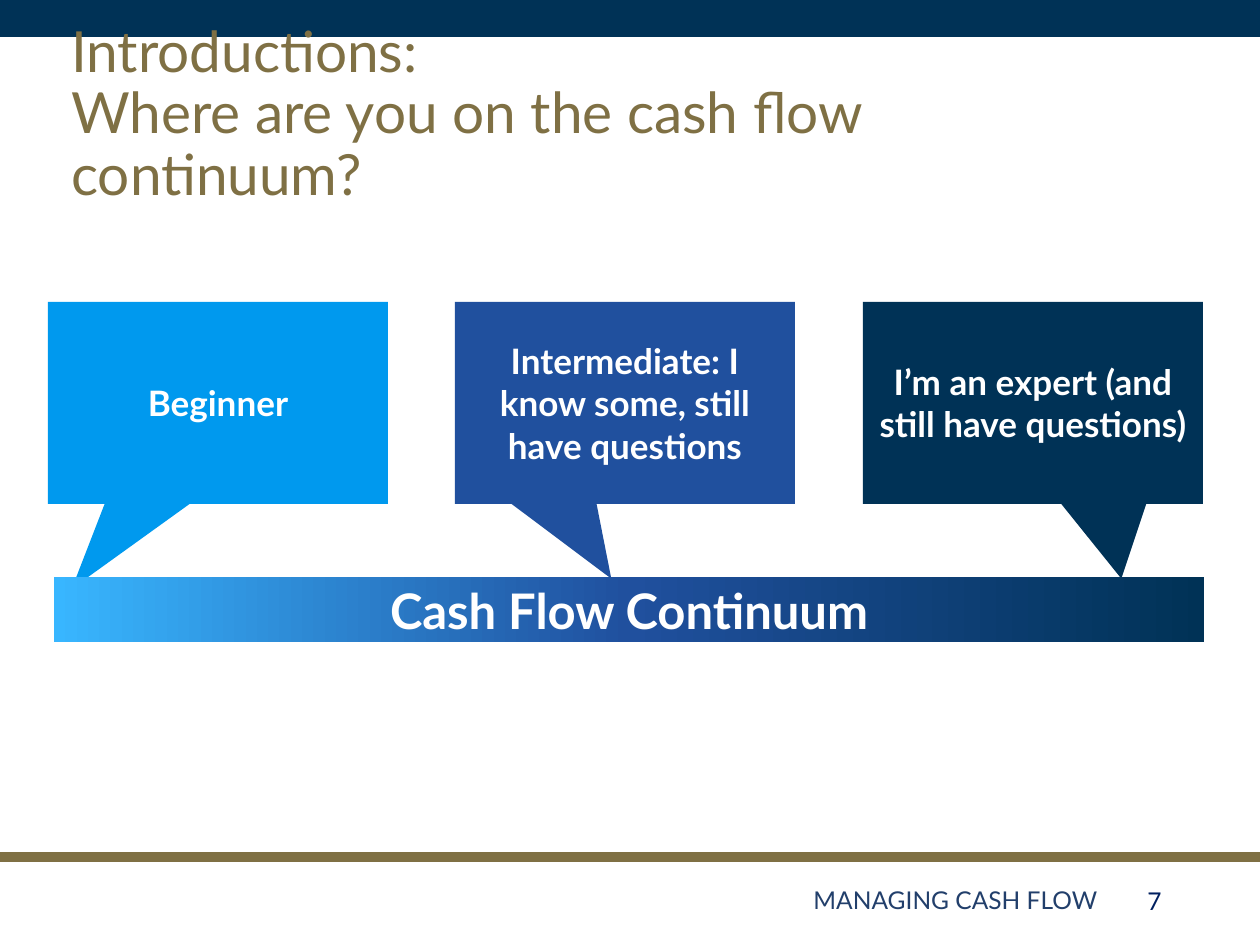
"""Build the cash flow continuum slide."""
from copy import deepcopy

from pptx import Presentation
from pptx.dml.color import RGBColor as Rgb
from pptx.enum.shapes import MSO_CONNECTOR as Connector, MSO_SHAPE as Shape
from pptx.enum.text import MSO_ANCHOR as Anchor, PP_ALIGN as Align
from pptx.oxml.ns import qn
from pptx.util import Emu, Pt

PX = 914400 / 126
COLORS = {
    "navy": "003256", "gold": "7F7044", "sky": "0099EE", "royal": "20509E",
    "light": "38B6FF", "white": "FFFFFF", "footer": "223F6B", "number": "002060",
}


def px(*lengths):
    return [Emu(round(length * PX)) for length in lengths]


def write(box, text, size=20, color="white", bold=False, align=Align.CENTER, spacing=1.0):
    frame = box.text_frame
    frame.word_wrap = True
    frame.vertical_anchor = Anchor.MIDDLE
    para = frame.paragraphs[0]
    para.text = text
    para.alignment = align
    para.line_spacing = spacing
    for span in para.runs:
        span.font.name = "Lato"
        span.font.size = Pt(size)
        span.font.bold = bold
        span.font.color.rgb = Rgb.from_string(COLORS[color])


deck = Presentation()
deck.slide_width, deck.slide_height = px(1260, 945)
page = deck.slides.add_slide(deck.slide_layouts[6])
shapes = page.shapes

band = shapes.add_shape(Shape.RECTANGLE, *px(0, 0, 1260, 37))
band.shadow.inherit = False
band.fill.solid()
band.fill.fore_color.rgb = Rgb.from_string(COLORS["navy"])
band.line.fill.background()

rule = shapes.add_connector(Connector.STRAIGHT, *px(0, 857, 1260, 857))
rule.line.color.rgb = Rgb.from_string(COLORS["gold"])
rule.line.width = Pt(6)
rule._element.spPr.add_effectLst() if hasattr(rule._element.spPr, "add_effectLst") else \
    rule._element.spPr.append(rule._element.spPr.makeelement(qn("a:effectLst"), {}))

title = shapes.add_textbox(*px(59, 47, 1086, 137))
write(title, "Introductions: \nWhere are you on the cash flow continuum?",
      size=32.4, color="gold", align=Align.LEFT, spacing=0.9)

levels = [
    ("Beginner", 48, "sky", (-0.43, 0.92)),
    ("Intermediate: I know some, still have questions", 455, "royal", (-0.04, 0.87)),
    ("I’m an expert (and still have questions)", 863, "navy", (0.26, 0.87)),
]
for text, left, color, tip in levels:
    callout = shapes.add_shape(Shape.RECTANGULAR_CALLOUT, *px(left, 302, 340, 202))
    callout.adjustments[0], callout.adjustments[1] = tip
    callout.shadow.inherit = False
    callout.fill.solid()
    callout.fill.fore_color.rgb = Rgb.from_string(COLORS[color])
    callout.line.fill.background()
    write(callout, text, bold=True)

continuum = shapes.add_shape(Shape.RECTANGLE, *px(54, 577, 1150, 65))
continuum.shadow.inherit = False
continuum.line.fill.background()
continuum.fill.gradient()
continuum.fill.gradient_angle = 0
stop_list = continuum._element.spPr.find(qn("a:gradFill")).find(qn("a:gsLst"))
stop_list.insert(1, deepcopy(stop_list[0]))
for stop, position, color in zip(continuum.fill.gradient_stops, (0, 0.5, 1),
                                 ("light", "royal", "navy")):
    stop.position = position
    stop.color.rgb = Rgb.from_string(COLORS[color])
write(continuum, "Cash Flow Continuum", size=28, bold=True)

footer = shapes.add_textbox(*px(522, 875, 588, 50))
write(footer, "MANAGING CASH FLOW", size=14, color="footer", align=Align.RIGHT)
number = shapes.add_textbox(*px(1112, 876, 62, 50))
write(number, "7", size=14, color="number", align=Align.RIGHT)

deck.save("out.pptx")
